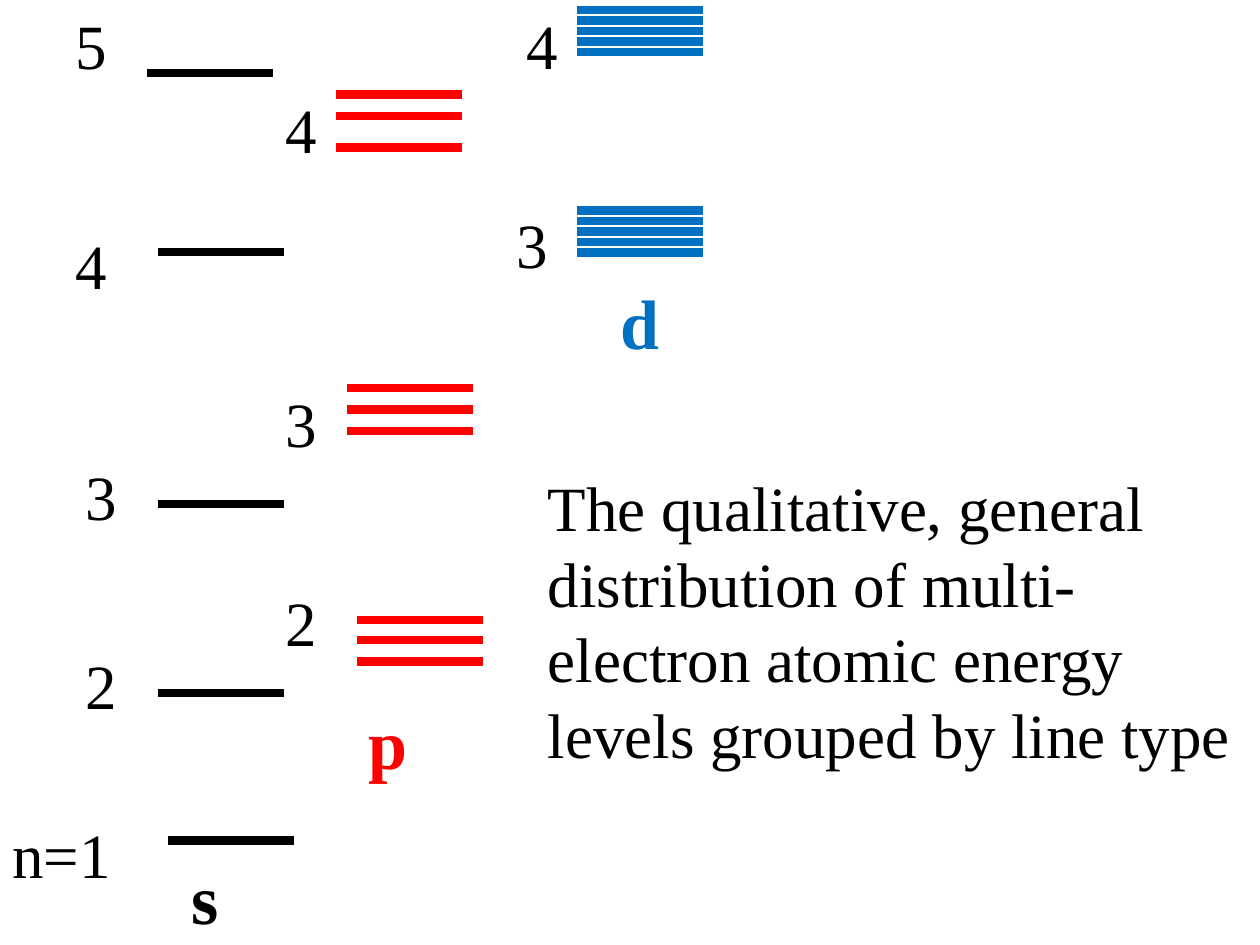
from dataclasses import dataclass

from lxml import etree
from pptx import Presentation
from pptx.dml.color import RGBColor
from pptx.enum import shapes, text
from pptx.oxml import ns
from pptx.util import Inches, Pt


@dataclass(frozen=True)
class Theme:
    font: str = "Times New Roman"
    body: int = 36
    head: int = 40
    rule: float = 4.75
    black: RGBColor = RGBColor(0, 0, 0)
    red: RGBColor = RGBColor(255, 0, 0)
    blue: RGBColor = RGBColor(0, 0x70, 0xC0)


THEME = Theme()

# Each shell: left, heights of its lines, then its label and the label's place.
S_SHELLS = [
    (1.33, [6.67], "n=1", 0, 6.42, 1.17),
    (1.25, [5.5], "2", 0.58, 5.08, 0.42),
    (1.25, [4], "3", 0.58, 3.58, 0.42),
    (1.25, [2], "4", 0.5, 1.75, 0.42),
    (1.17, [0.58], "5", 0.5, 0, 0.42),
]
P_SHELLS = [
    (2.83, [4.92, 5.08, 5.25], "2", 2.17, 4.58, 0.42),
    (2.75, [3.08, 3.25, 3.42], "3", 2.17, 3, 0.42),
    (2.67, [0.75, 0.92, 1.17], "4", 2.17, 0.67, 0.42),
]
D_SHELLS = [
    (4.58, [top + i / 12 for i in range(5)], name, left, y, 0.42)
    for top, name, left, y in [(1.67, "3", 4, 1.58), (0.08, "4", 4.08, 0)]
]


def add_level(slide, left, y, color):
    line = slide.shapes.add_connector(
        shapes.MSO_CONNECTOR.STRAIGHT,
        Inches(left), Inches(y), Inches(left + 1), Inches(y))
    line.line.color.rgb = color
    line.line.width = Pt(THEME.rule)
    etree.SubElement(line._element.spPr, ns.qn("a:effectLst"))


def add_text(slide, words, left, top, width, height,
             size=THEME.body, color=THEME.black, bold=False):
    box = slide.shapes.add_textbox(
        Inches(left), Inches(top), Inches(width), Inches(height))
    frame = box.text_frame
    frame.word_wrap = True
    frame.auto_size = text.MSO_AUTO_SIZE.SHAPE_TO_FIT_TEXT
    frame.text = words
    font = frame.paragraphs[0].runs[0].font
    font.name = THEME.font
    font.size = Pt(size)
    font.bold = bold
    font.color.rgb = color


def add_group(slide, shells, color, name, left, top):
    """Draw all shells of one orbital type, with the type's letter."""
    for start, levels, label, x, y, width in shells:
        for level in levels:
            add_level(slide, start, level, color)
        add_text(slide, label, x, y, width, 0.71)
    add_text(slide, name, left, top, 0.92, 0.77, THEME.head, color, True)


def main():
    deck = Presentation()
    deck.slide_width, deck.slide_height = Inches(10), Inches(7.5)
    slide = deck.slides.add_slide(deck.slide_layouts[6])
    add_group(slide, S_SHELLS, THEME.black, "s", 1.42, 6.73)
    add_group(slide, P_SHELLS, THEME.red, "p", 2.83, 5.5)
    add_group(slide, D_SHELLS, THEME.blue, "d", 4.83, 2.17)
    add_text(slide, "The qualitative, general distribution of multi-electron "
             "atomic energy levels grouped by line type",
             4.25, 3.67, 5.75, 2.52)
    deck.save("out.pptx")


if __name__ == "__main__":
    main()
